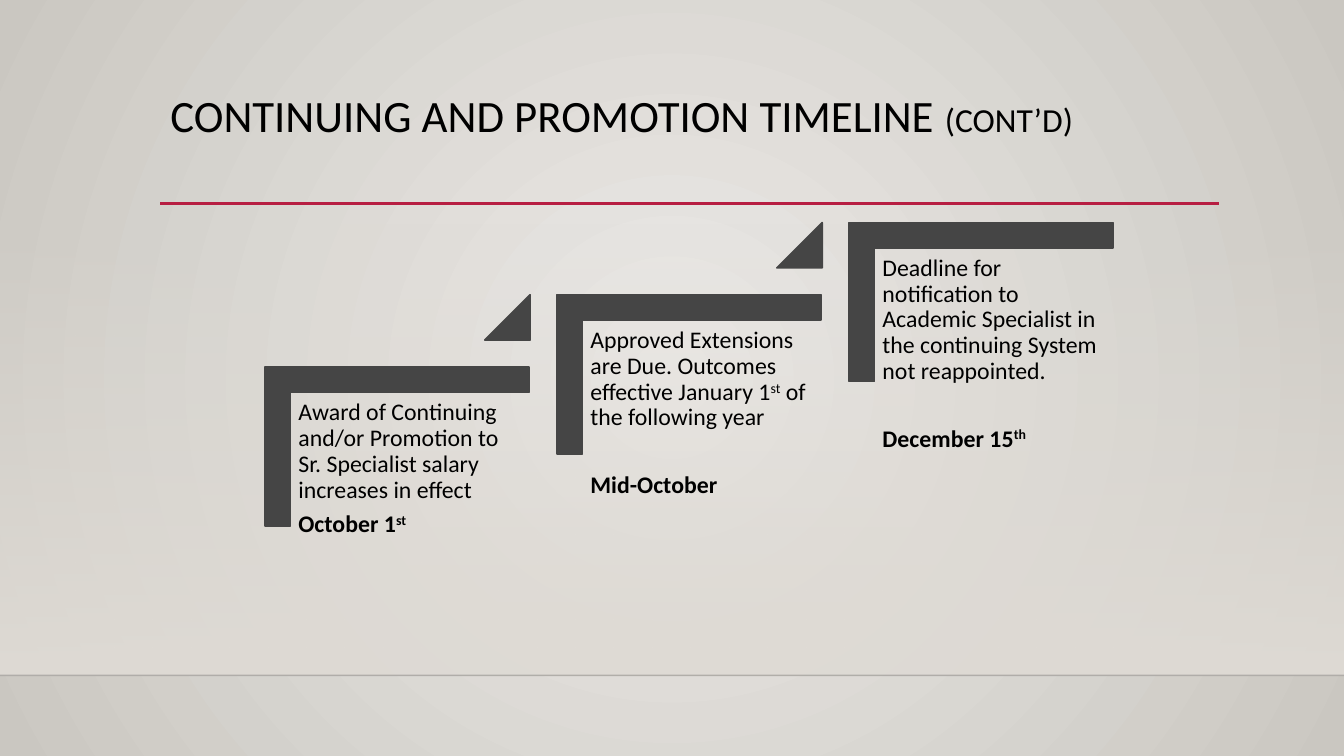
from lxml import etree
from pptx import Presentation
from pptx.dml.color import RGBColor
from pptx.enum.shapes import MSO_CONNECTOR, MSO_SHAPE
from pptx.enum.text import MSO_ANCHOR, MSO_AUTO_SIZE, PP_ALIGN
from pptx.oxml.ns import qn
from pptx.util import Cm, Pt

RECTANGLE = MSO_SHAPE.RECTANGLE
CORNER = MSO_SHAPE.CORNER
TRIANGLE = MSO_SHAPE.ISOSCELES_TRIANGLE
STRAIGHT = MSO_CONNECTOR.STRAIGHT
TOP = MSO_ANCHOR.TOP
LEFT = PP_ALIGN.LEFT
NO_AUTOFIT = MSO_AUTO_SIZE.NONE

FONT = "Calibri"
BLACK = "000000"
STEP_GREY = "454545"
STEP_RIGHT = 7.36
STEP_UP = 1.82
STEPS = [
    ([("Award of Continuing and/or Promotion to Sr. Specialist salary increases in effect", False)],
     [("October 1", False), ("st", True)], 0),
    ([("Approved Extensions are Due. Outcomes effective January 1", False), ("st", True),
      (" of the following year", False)],
     [("Mid-October", False)], 24),
    ([("Deadline for notification to Academic Specialist in the continuing System not reappointed.", False)],
     [("December 15", False), ("th", True)], 24),
]


def colour(value):
    return RGBColor.from_string(value)


def set_alpha(colour_element, percent):
    etree.SubElement(colour_element, qn("a:alpha")).set("val", str(percent * 1000))


def set_gradient(fill, start, end):
    fill.gradient()
    for stop, value, position in zip(fill.gradient_stops, (start, end), (0, 1)):
        stop.color.rgb = colour(value)
        stop.position = position


def set_background(slide):
    set_gradient(slide.background.fill, "ECEAE7", "CAC7C1")
    gradient = next(slide.element.iter(qn("a:gradFill")))
    gradient.remove(gradient.find(qn("a:lin")))
    circle = etree.SubElement(gradient, qn("a:path"))
    circle.set("path", "circle")
    center = etree.SubElement(circle, qn("a:fillToRect"))
    for side in ("l", "t", "r", "b"):
        center.set(side, "50000")


def add_wall_shade(slide):
    shape = slide.shapes.add_shape(RECTANGLE, Cm(0), Cm(5.61), Cm(33.87), Cm(11.41))
    shape.shadow.inherit = False
    shape.line.fill.background()
    set_gradient(shape.fill, "DFDBD5", "DFDBD5")
    shape.fill.gradient_angle = 270
    set_alpha(next(shape.element.iter(qn("a:srgbClr"))), 0)


def add_rule(slide, left, right, top, value, width):
    rule = slide.shapes.add_connector(STRAIGHT, Cm(left), Cm(top), Cm(right), Cm(top))
    rule.line.color.rgb = colour(value)
    rule.line.width = Pt(width)
    etree.SubElement(rule.element.spPr, qn("a:effectLst"))
    return rule


def add_run(paragraph, text, size, bold=False, superscript=False):
    run = paragraph.add_run()
    run.text = text
    run.font.name = FONT
    run.font.size = Pt(size)
    run.font.bold = bold
    run.font.color.rgb = colour(BLACK)
    if superscript:
        run.font._element.set("baseline", "30000")


def set_title(slide):
    title = slide.shapes.title
    slide.shapes.element.append(title.element)
    title.left, title.top, title.width, title.height = Cm(4.04), Cm(2.24), Cm(26.67), Cm(2.92)
    text_frame = title.text_frame
    text_frame.auto_size = NO_AUTOFIT
    text_frame.vertical_anchor = TOP
    text_frame.word_wrap = True
    paragraph = text_frame.paragraphs[0]
    paragraph.alignment = LEFT
    paragraph.line_spacing = 0.9
    add_run(paragraph, "CONTINUING AND PROMOTION TIMELINE ", 32)
    add_run(paragraph, "(CONT’D)", 24)


def add_step_shape(slide, kind, left, top, width, height, adjustments):
    shape = slide.shapes.add_shape(kind, Cm(left), Cm(top), Cm(width), Cm(height))
    shape.shadow.inherit = False
    shape.fill.solid()
    shape.fill.fore_color.rgb = colour(STEP_GREY)
    shape.line.color.rgb = colour(STEP_GREY)
    shape.line.width = Pt(1.25)
    for index, value in enumerate(adjustments):
        shape.adjustments[index] = value
    return shape


def add_step_text(slide, left, top, description, date, date_gap):
    text_frame = slide.shapes.add_textbox(Cm(left), Cm(top), Cm(6.02), Cm(5.26)).text_frame
    text_frame.word_wrap = True
    text_frame.vertical_anchor = TOP
    text_frame.margin_left = text_frame.margin_right = Cm(0.18)
    text_frame.margin_top = text_frame.margin_bottom = Cm(0.18)
    date_paragraph = text_frame.add_paragraph()
    date_paragraph.space_before = Pt(date_gap)
    for paragraph, parts, bold in ((text_frame.paragraphs[0], description, False),
                                   (date_paragraph, date, True)):
        paragraph.line_spacing = 0.9
        paragraph.space_after = Pt(6)
        for text, superscript in parts:
            add_run(paragraph, text, 17, bold, superscript)


def add_step(slide, index, description, date, date_gap):
    right = index * STEP_RIGHT
    up = index * STEP_UP
    corner = add_step_shape(slide, CORNER, 8 + right, 7.92 - up, 4.01, 6.66, (0.161, 0.161))
    corner.rotation = 90
    add_step_text(slide, 7.34 + right, 9.91 - up, description, date, date_gap)
    if index < len(STEPS) - 1:
        add_step_shape(slide, TRIANGLE, 12.22 + right, 7.43 - up, 1.14, 1.14, (1,))


def main():
    presentation = Presentation()
    presentation.slide_width = Cm(33.87)
    presentation.slide_height = Cm(19.05)
    slide = presentation.slides.add_slide(presentation.slide_layouts[5])
    set_background(slide)
    add_wall_shade(slide)
    floor = add_rule(slide, 0, 33.87, 17.02, "000001", 1)
    set_alpha(next(floor.element.iter(qn("a:srgbClr"))), 20)
    add_rule(slide, 4.04, 30.73, 5.13, "B71E42", 2.5)
    set_title(slide)
    for index, (description, date, date_gap) in enumerate(STEPS):
        add_step(slide, index, description, date, date_gap)
    presentation.save("out.pptx")


if __name__ == "__main__":
    main()
